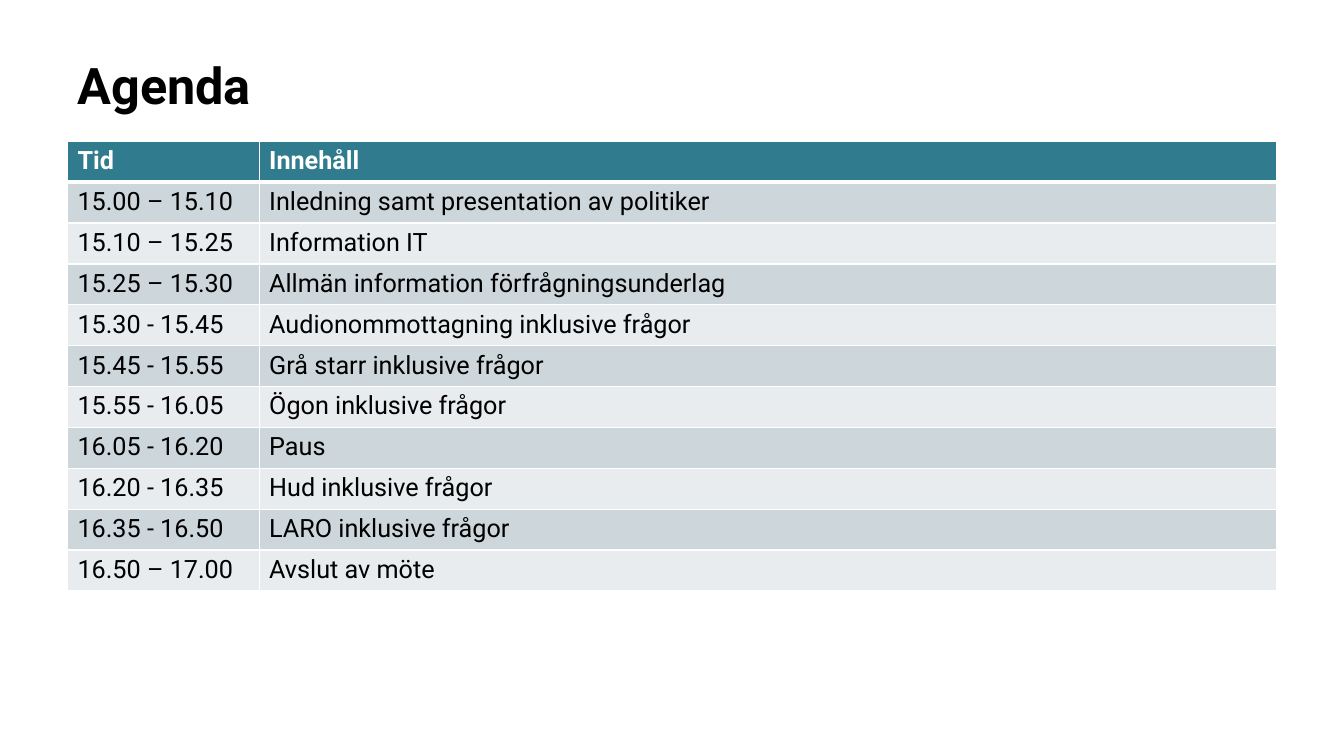
from lxml.etree import SubElement
from pptx import Presentation
from pptx.dml.color import RGBColor
from pptx.enum.text import MSO_ANCHOR
from pptx.oxml.ns import qn
from pptx.util import Cm, Pt

BLACK = RGBColor(0x00, 0x00, 0x00)
WHITE = RGBColor(0xFF, 0xFF, 0xFF)
TEAL = RGBColor(0x30, 0x7C, 0x8E)
BANDS = (RGBColor(0xCD, 0xD7, 0xDB), RGBColor(0xE8, 0xEC, 0xEE))

FONT = "Roboto"
LEFT = Cm(1.7)
COLUMN_WIDTHS = (Cm(4.83), Cm(25.65))
ROW_HEIGHT = Cm(1.03)

AGENDA = [
    ("Tid", "Innehåll"),
    ("15.00 – 15.10", "Inledning samt presentation av politiker"),
    ("15.10 – 15.25", "Information IT"),
    ("15.25 – 15.30", "Allmän information förfrågningsunderlag"),
    ("15.30 - 15.45", "Audionommottagning inklusive frågor"),
    ("15.45 - 15.55", "Grå starr inklusive frågor"),
    ("15.55 - 16.05", "Ögon inklusive frågor"),
    ("16.05 - 16.20", "Paus"),
    ("16.20 - 16.35", "Hud inklusive frågor"),
    ("16.35 - 16.50", "LARO inklusive frågor"),
    ("16.50 – 17.00", "Avslut av möte"),
]


def write_text(frame, text, size, color, bold):
    """Put one formatted line of text into a text frame."""
    frame.text = text
    font = frame.paragraphs[0].runs[0].font
    font.name = FONT
    font.size = Pt(size)
    font.bold = bold
    font.color.rgb = color


def add_title(page, text):
    """Add the slide heading."""
    box = page.shapes.add_textbox(LEFT, Cm(1), sum(COLUMN_WIDTHS), Cm(2.08))
    frame = box.text_frame
    frame.word_wrap = True
    frame.vertical_anchor = MSO_ANCHOR.MIDDLE
    write_text(frame, text, 36, BLACK, True)
    frame.paragraphs[0].line_spacing = 1.1


def set_borders(cell, top, bottom):
    """Draw white cell borders, with top and bottom widths in points."""
    properties = cell._tc.get_or_add_tcPr()
    for side, width in (("L", 1), ("R", 1), ("T", top), ("B", bottom)):
        line = SubElement(properties, qn(f"a:ln{side}"), w=str(Pt(width)))
        fill = SubElement(line, qn("a:solidFill"))
        SubElement(fill, qn("a:srgbClr"), val=str(WHITE))


def add_agenda(page, entries):
    """Add the agenda table with a header row and banded rows."""
    table = page.shapes.add_table(
        len(entries), len(COLUMN_WIDTHS), LEFT, Cm(3.56),
        sum(COLUMN_WIDTHS), ROW_HEIGHT * len(entries),
    ).table
    for column, width in zip(table.columns, COLUMN_WIDTHS):
        column.width = width
    for index, entry in enumerate(entries):
        header = index == 0
        table.rows[index].height = ROW_HEIGHT
        for cell, text in zip(table.rows[index].cells, entry):
            set_borders(cell, 3 if index == 1 else 1, 3 if header else 1)
            cell.fill.solid()
            cell.fill.fore_color.rgb = TEAL if header else BANDS[(index - 1) % 2]
            write_text(cell.text_frame, text, 18, WHITE if header else BLACK, header)


def main():
    """Build the agenda slide and save the deck."""
    deck = Presentation()
    deck.slide_width = Cm(33.87)
    deck.slide_height = Cm(19.05)
    page = deck.slides.add_slide(deck.slide_layouts[6])
    add_title(page, "Agenda")
    add_agenda(page, AGENDA)
    deck.save("out.pptx")


if __name__ == "__main__":
    main()
